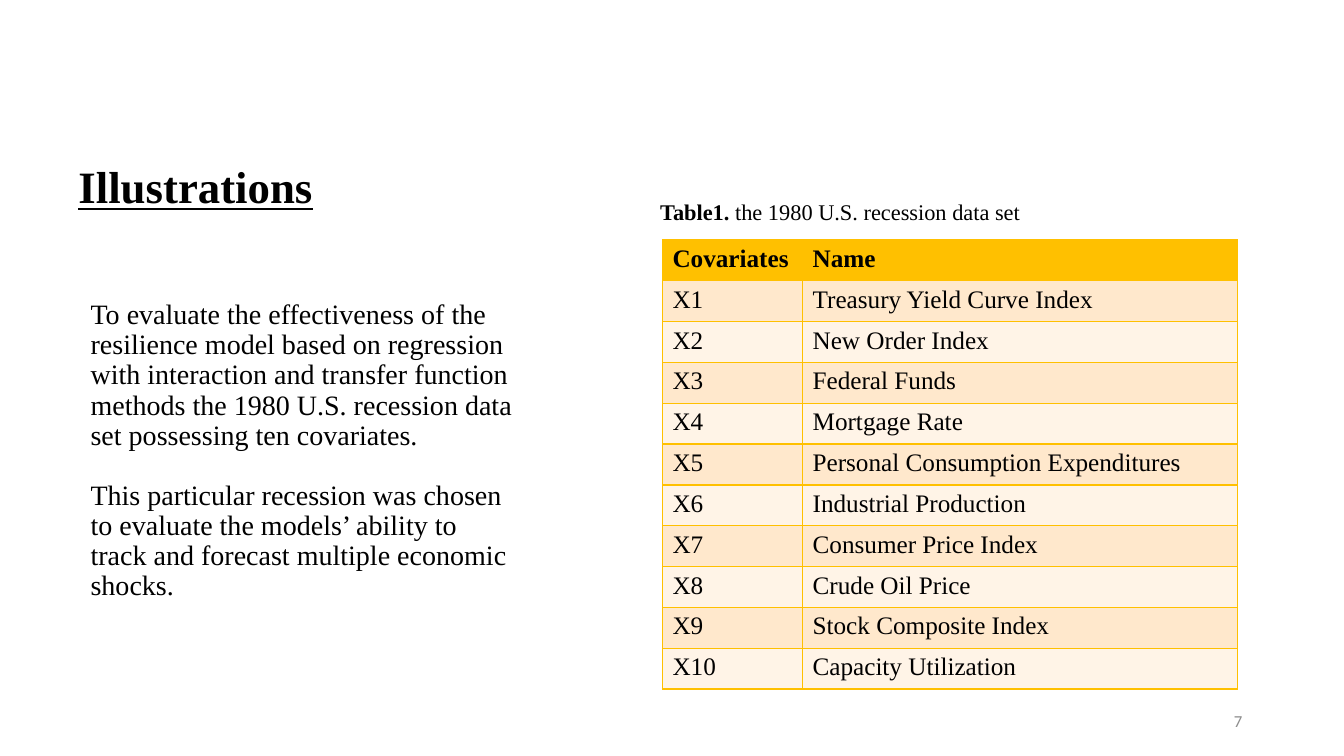
import pptx
import pptx.dml.color
import pptx.enum.text
import pptx.oxml
import pptx.oxml.ns
import pptx.util

W, H = 13.33, 7.5
SERIF = "Times New Roman"
GOLD, BANDS = "FFC000", ("FFF4E7", "FFE8CC")
PARAGRAPHS = (
    "To evaluate the effectiveness of the resilience model based on regression with "
    "interaction and transfer function methods the 1980 U.S. recession data set "
    "possessing ten covariates.",
    "This particular recession was chosen to evaluate the models’ ability to track "
    "and forecast multiple economic shocks.",
)
COVARIATES = (
    "Treasury Yield Curve Index", "New Order Index", "Federal Funds", "Mortgage Rate",
    "Personal Consumption Expenditures", "Industrial Production",
    "Consumer Price Index", "Crude Oil Price", "Stock Composite Index",
    "Capacity Utilization",
)


def color(hex_text):
    """Return an RGB colour from a hex string."""
    return pptx.dml.color.RGBColor.from_string(hex_text)


def inches(*lengths):
    """Convert lengths to slide units."""
    return [pptx.util.Inches(n) for n in lengths]


def add_run(p, text, size, bold=False, font=SERIF, ink="000000"):
    """Append one formatted run to a paragraph."""
    r = p.add_run()
    r.text = text
    r.font.name, r.font.size, r.font.bold = font, pptx.util.Pt(size), bold
    r.font.color.rgb = color(ink)
    return r


def add_box(slide, box, wrap=True, anchor=pptx.enum.text.MSO_ANCHOR.TOP):
    """Add a text box and return its text frame."""
    tf = slide.shapes.add_textbox(*inches(*box)).text_frame
    tf.word_wrap, tf.vertical_anchor = wrap, anchor
    return tf


def add_heading(slide, box):
    """Place the underlined heading."""
    tf = add_box(slide, box, wrap=False)
    add_run(tf.paragraphs[0], "Illustrations", 32, True).font.underline = True


def add_body(slide, box):
    """Place the explanatory paragraphs."""
    tf = add_box(slide, box)
    for i, text in enumerate(PARAGRAPHS):
        p = tf.add_paragraph() if i else tf.paragraphs[0]
        p.line_spacing = 0.9
        p.space_before = pptx.util.Pt(21 if i else 0)
        add_run(p, text, 20)


def add_caption(slide, box):
    """Place the table caption."""
    p = add_box(slide, box).paragraphs[0]
    p.line_spacing = 0.9
    add_run(p, "Table1. ", 16, True)
    add_run(p, "the 1980 U.S. recession data set", 16)


def style_cell(cell, fill):
    """Fill a cell and outline it in gold."""
    cell.fill.solid()
    cell.fill.fore_color.rgb = color(fill)
    for i, side in enumerate("LRTB"):
        cell._tc.get_or_add_tcPr().insert(i, pptx.oxml.parse_xml(
            f'<a:ln{side} {pptx.oxml.ns.nsdecls("a")} w="12700"><a:solidFill>'
            f'<a:srgbClr val="{GOLD}"/></a:solidFill></a:ln{side}>'))


def add_covariates(slide, box):
    """Place the table of covariates with a gold header and banded rows."""
    rows = [("Covariates", "Name")]
    rows += [(f"X{i}", name) for i, name in enumerate(COVARIATES, 1)]
    table = slide.shapes.add_table(len(rows), 2, *inches(*box)).table
    for col, width in zip(table.columns, (1.39, box[2] - 1.39)):
        col.width = pptx.util.Inches(width)
    for i, row in enumerate(rows):
        table.rows[i].height = pptx.util.Inches(box[3] / len(rows))
        for j, text in enumerate(row):
            cell = table.cell(i, j)
            style_cell(cell, BANDS[i % 2] if i else GOLD)
            add_run(cell.text_frame.paragraphs[0], text, 18, i == 0)


def add_page_number(slide, box):
    """Place the page number at the right of its box."""
    p = add_box(slide, box, anchor=pptx.enum.text.MSO_ANCHOR.MIDDLE).paragraphs[0]
    p.alignment = pptx.enum.text.PP_ALIGN.RIGHT
    add_run(p, "7", 12, font="Calibri", ink="8C8C8C")


def main():
    """Build and save the slide."""
    prs = pptx.Presentation()
    prs.slide_width, prs.slide_height = inches(W, H)
    slide = prs.slides.add_slide(prs.slide_layouts[6])
    add_heading(slide, (0.68, 1.53, 2.55, 0.64))
    add_body(slide, (0.8, 2.93, 4.45, 3.12))
    add_caption(slide, (6.45, 1.95, 6.2, 0.35))
    add_covariates(slide, (6.57, 2.38, 5.7, 4.46))
    add_page_number(slide, (9.42, 6.95, 3, 0.4))
    prs.save("out.pptx")


if __name__ == "__main__":
    main()
